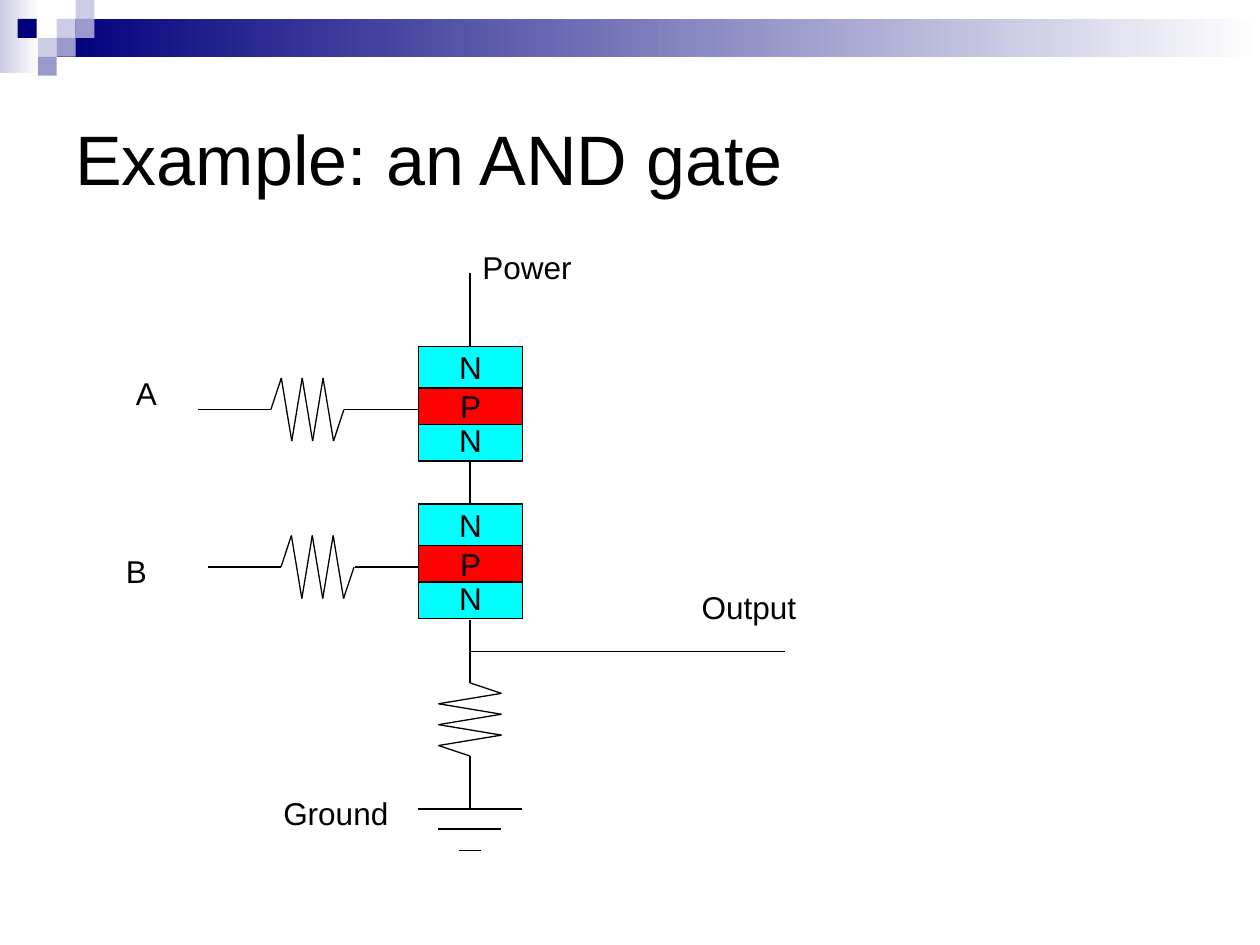
import pptx
import pptx.util
import pptx.dml.color
import pptx.enum.shapes
import pptx.enum.text
import pptx.oxml
import pptx.oxml.ns

Inches = pptx.util.Inches
ANCHOR = pptx.enum.text.MSO_ANCHOR
ALIGN = pptx.enum.text.PP_ALIGN
FIT = pptx.enum.text.MSO_AUTO_SIZE

NAVY, LILAC, VIOLET, WHITE, BLACK = "00007D", "CCCCE6", "9999CC", "FFFFFF", "000000"
CYAN, RED = "00FFFF", "FF0101"

BANNER = [((0, 0, 0.31, 0.58), LILAC), ((0.45, 0.15, 9.55, 0.3), NAVY)]
TILE = 0.15
TILES = [
    (0.45, 0.15, LILAC), (0.6, 0, LILAC), (0.6, 0.15, VIOLET), (0.3, 0.3, LILAC),
    (0.14, 0.15, NAVY), (0.45, 0.3, VIOLET), (0.3, 0.45, VIOLET),
]
TITLE = ("Example: an AND gate", (0.5, 0.5, 9, 1.5))
LABELS = [
    ("A", (0.98, 2.92, 0.37, 0.4)),
    ("B", (0.9, 4.33, 0.37, 0.4)),
    ("Power", (3.73, 1.92, 0.91, 0.4)),
    ("Output", (5.47, 4.62, 0.95, 0.4)),
    ("Ground", (2.15, 6.25, 1.05, 0.4)),
]
TRANSISTOR_LEFT, TRANSISTOR_WIDTH = 3.32, 0.83
TRANSISTOR_TOPS = [2.75, 4]
LAYERS = [("N", 0, 0.33, CYAN), ("N", 0.58, 0.33, CYAN), ("P", 0.33, 0.29, RED)]
AXIS = 3.73
WIRES = [
    ((AXIS, 2.17), (AXIS, 2.75)),
    ((AXIS, 3.67), (AXIS, 4)),
    ((AXIS, 4.92), (AXIS, 5.42)),
    ((AXIS, 5.17), (6.23, 5.17)),
    ((AXIS, 6), (AXIS, 6.42)),
    ((1.57, 3.25), (2.15, 3.25)),
    ((2.73, 3.25), (TRANSISTOR_LEFT, 3.25)),
    ((1.65, 4.5), (2.23, 4.5)),
    ((2.82, 4.5), (TRANSISTOR_LEFT, 4.5)),
]
GROUND_BARS = [(6.42, 0.83), (6.58, 0.5), (6.75, 0.17)]
RESISTORS = [(2.15, 3.25, False), (2.23, 4.5, False), (AXIS, 5.42, True)]
RESISTOR_LENGTH, RESISTOR_SWING = 0.58, 0.25
ZIGZAG = [0, 1, -1, 1, -1, 1, -1, 0]

LABEL_FRAME = {"word_wrap": False, "auto_size": FIT.SHAPE_TO_FIT_TEXT,
               "vertical_anchor": ANCHOR.TOP}
LAYER_FRAME = {"word_wrap": False, "vertical_anchor": ANCHOR.MIDDLE}
TITLE_FRAME = {"word_wrap": True, "vertical_anchor": ANCHOR.MIDDLE}


def color(value):
    return pptx.dml.color.RGBColor.from_string(value)


def apply(target, values):
    for name, value in values.items():
        setattr(target, name, value)


def write(holder, words, size, frame_format, align=ALIGN.LEFT):
    frame = holder.text_frame
    apply(frame, frame_format)
    paragraph = frame.paragraphs[0]
    paragraph.alignment = align
    run = paragraph.add_run()
    run.text = words
    apply(run.font, {"name": "Arial", "size": pptx.util.Pt(size)})
    run.font.color.rgb = color(BLACK)


def add_block(slide, box, fill, fade=None, outline=None):
    block = slide.shapes.add_shape(
        pptx.enum.shapes.MSO_SHAPE.RECTANGLE, *map(Inches, box))
    block.shadow.inherit = False
    if fade:
        block.fill.gradient()
        block.fill.gradient_angle = 0
        for stop, shade in zip(block.fill.gradient_stops, (fill, fade)):
            stop.color.rgb = color(shade)
    else:
        block.fill.solid()
        block.fill.fore_color.rgb = color(fill)
    if outline:
        block.line.color.rgb = color(outline)
        block.line.width = pptx.util.Pt(0.75)
    else:
        block.line.fill.background()
    return block


def add_label(slide, words, box, size, frame_format):
    label = slide.shapes.add_textbox(*map(Inches, box))
    write(label, words, size, frame_format)


def add_wire(slide, start, end):
    wire = slide.shapes.add_connector(
        pptx.enum.shapes.MSO_CONNECTOR.STRAIGHT, *map(Inches, start + end))
    wire.line.color.rgb = color(BLACK)
    wire.line.width = pptx.util.Pt(0.75)
    properties = wire._element.find(pptx.oxml.ns.qn("p:spPr"))
    properties.append(pptx.oxml.parse_xml(
        "<a:effectLst %s/>" % pptx.oxml.ns.nsdecls("a")))


def add_resistor(slide, left, top, upright):
    step = RESISTOR_LENGTH / (len(ZIGZAG) - 1)
    corners = []
    for index, side in enumerate(ZIGZAG):
        along, across = index * step, side * RESISTOR_SWING
        corners.append((left + across, top + along) if upright
                       else (left + along, top - across))
    for start, end in zip(corners, corners[1:]):
        add_wire(slide, start, end)


def main():
    deck = pptx.Presentation()
    apply(deck, {"slide_width": Inches(10), "slide_height": Inches(7.5)})
    slide = deck.slides.add_slide(deck.slide_layouts[6])

    for box, shade in BANNER:
        add_block(slide, box, shade, fade=WHITE)
    for left, top, shade in TILES:
        add_block(slide, (left, top, TILE, TILE), shade)
    add_label(slide, *TITLE, 40, TITLE_FRAME)

    for top in TRANSISTOR_TOPS:
        for words, offset, height, shade in LAYERS:
            box = (TRANSISTOR_LEFT, top + offset, TRANSISTOR_WIDTH, height)
            layer = add_block(slide, box, shade, outline=BLACK)
            write(layer, words, 18, LAYER_FRAME, ALIGN.CENTER)

    for start, end in WIRES:
        add_wire(slide, start, end)
    for height, width in GROUND_BARS:
        add_wire(slide, (AXIS - width / 2, height), (AXIS + width / 2, height))
    for resistor in RESISTORS:
        add_resistor(slide, *resistor)
    for words, box in LABELS:
        add_label(slide, words, box, 18, LABEL_FRAME)

    deck.save("out.pptx")


if __name__ == "__main__":
    main()
